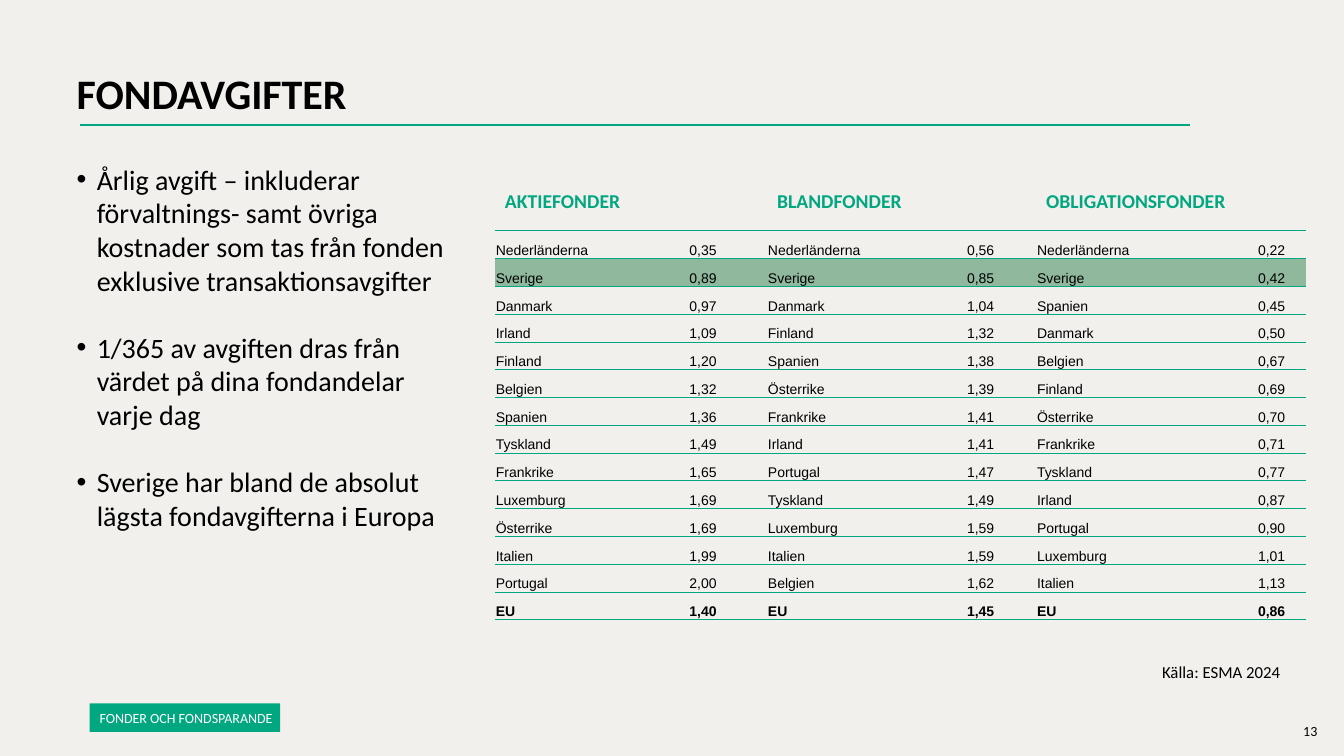
"""Build the slide on fund fees in Europe."""
import dataclasses
import typing

import lxml.etree
import pptx
import pptx.dml.color
import pptx.enum.shapes
import pptx.enum.text
import pptx.oxml.ns
import pptx.util

Pt = pptx.util.Pt
PP_ALIGN = pptx.enum.text.PP_ALIGN
MSO_ANCHOR = pptx.enum.text.MSO_ANCHOR
MSO_AUTO_SIZE = pptx.enum.text.MSO_AUTO_SIZE


@dataclasses.dataclass(frozen=True)
class Theme:
    green: str = "00A780"
    highlight: str = "8FB89D"
    black: str = "000000"
    white: str = "FFFFFF"
    background: str = "F1F0EC"
    heading_font: str = "Calibri"
    table_font: str = "Arial"
    title_size: float = 30
    list_size: float = 20
    header_size: float = 14
    source_size: float = 12
    small_size: float = 10


@dataclasses.dataclass(frozen=True)
class Frame:
    left: float
    top: float
    width: float
    height: float

    def lengths(self) -> list[int]:
        return [Pt(value) for value in dataclasses.astuple(self)]


@dataclasses.dataclass(frozen=True)
class Label:
    text: str
    frame: Frame
    size: float


@dataclasses.dataclass(frozen=True)
class FundType:
    name: str
    name_width: float
    fee_width: float
    fees: str

    def rows(self) -> list[list[str]]:
        return [entry.split() for entry in self.fees.split("; ")]


THEME = Theme()
TITLE_FRAME = Frame(47.5, 49, 879, 104.4)
LIST_FRAME = Frame(47.5, 112.3, 283, 332.6)
TAG_FRAME = Frame(64, 502.5, 136.1, 20.2)
TABLE_LEFT, TABLE_TOP = 353.5, 131.8
HEADER_HEIGHT, ROW_HEIGHT = 33, 19.85
HIGHLIGHTED = "Sverige"
TOTAL = "EU"

BULLETS = (
    "Årlig avgift – inkluderar förvaltnings- samt övriga kostnader som tas från fonden "
    "exklusive transaktionsavgifter",
    "1/365 av avgiften dras från värdet på dina fondandelar varje dag",
    "Sverige har bland de absolut lägsta fondavgifterna i Europa",
)
LABELS = (
    Label("Källa: ESMA 2024", Frame(823, 469.4, 103, 21.6), THEME.source_size),
    Label("13", Frame(923.8, 512.6, 28.8, 19.4), THEME.small_size),
)
FUND_TYPES = (
    FundType("AKTIEFONDER", 103, 91.4,
             "Nederländerna 0,35; Sverige 0,89; Danmark 0,97; Irland 1,09; Finland 1,20; "
             "Belgien 1,32; Spanien 1,36; Tyskland 1,49; Frankrike 1,65; Luxemburg 1,69; "
             "Österrike 1,69; Italien 1,99; Portugal 2,00; EU 1,40"),
    FundType("BLANDFONDER", 113, 79.2,
             "Nederländerna 0,56; Sverige 0,85; Danmark 1,04; Finland 1,32; Spanien 1,38; "
             "Österrike 1,39; Frankrike 1,41; Irland 1,41; Portugal 1,47; Tyskland 1,49; "
             "Luxemburg 1,59; Italien 1,59; Belgien 1,62; EU 1,45"),
    FundType("OBLIGATIONSFONDER", 144, 48.6,
             "Nederländerna 0,22; Sverige 0,42; Spanien 0,45; Danmark 0,50; Belgien 0,67; "
             "Finland 0,69; Österrike 0,70; Frankrike 0,71; Tyskland 0,77; Irland 0,87; "
             "Portugal 0,90; Luxemburg 1,01; Italien 1,13; EU 0,86"),
)


def rgb(code: str) -> pptx.dml.color.RGBColor:
    return pptx.dml.color.RGBColor.from_string(code)


def add_element(parent: typing.Any, tag: str, **attributes: str) -> typing.Any:
    return lxml.etree.SubElement(parent, pptx.oxml.ns.qn(tag), attributes)


def style(para: typing.Any, size: float, color: str = THEME.black,
          name: str = THEME.heading_font, bold: bool = False) -> None:
    para.font.size = Pt(size)
    para.font.name = name
    para.font.bold = bold
    para.font.color.rgb = rgb(color)


def place(shape: typing.Any, frame: Frame) -> None:
    shape.left, shape.top, shape.width, shape.height = frame.lengths()


def write_title(box: typing.Any) -> None:
    place(box, TITLE_FRAME)
    text = box.text_frame
    text.auto_size = MSO_AUTO_SIZE.NONE
    text.vertical_anchor = MSO_ANCHOR.TOP
    para = text.paragraphs[0]
    para.text = "FONDAVGIFTER"
    para.alignment = PP_ALIGN.LEFT
    para.line_spacing = 0.9
    style(para, THEME.title_size, bold=True)


def write_list(box: typing.Any) -> None:
    place(box, LIST_FRAME)
    text = box.text_frame
    text.auto_size = MSO_AUTO_SIZE.NONE
    for index, bullet in enumerate(BULLETS):
        para = text.add_paragraph() if index else text.paragraphs[0]
        para.text = bullet
        para.space_before = Pt(24 if index else 0)
        properties = para._p.get_or_add_pPr()
        properties.set("marL", str(Pt(14.4)))
        properties.set("indent", str(-Pt(14.4)))
        add_element(properties, "a:buFont", typeface="Arial")
        add_element(properties, "a:buChar", char="•")
        style(para, THEME.list_size)


def add_label(slide: typing.Any, label: Label) -> None:
    text = slide.shapes.add_textbox(*label.frame.lengths()).text_frame
    text.word_wrap = True
    text.paragraphs[0].text = label.text
    style(text.paragraphs[0], label.size)


def add_title_rule(slide: typing.Any) -> None:
    rule = slide.shapes.add_connector(
        pptx.enum.shapes.MSO_CONNECTOR.STRAIGHT, Pt(56.9), Pt(89.3), Pt(850.3), Pt(89.3))
    rule.line.color.rgb = rgb(THEME.green)
    rule.line.width = Pt(1.5)
    add_element(rule._element.spPr, "a:effectLst")


def add_tag(slide: typing.Any) -> None:
    tag = slide.shapes.add_shape(
        pptx.enum.shapes.MSO_SHAPE.RECTANGLE, *TAG_FRAME.lengths())
    tag.shadow.inherit = False
    tag.fill.solid()
    tag.fill.fore_color.rgb = rgb(THEME.green)
    tag.line.fill.background()
    text = tag.text_frame
    text.word_wrap = False
    text.vertical_anchor = MSO_ANCHOR.MIDDLE
    text.margin_left, text.margin_top = Pt(7.2), Pt(5.8)
    text.margin_right, text.margin_bottom = Pt(2.9), Pt(3.6)
    para = text.paragraphs[0]
    para.text = "FONDER OCH FONDSPARANDE"
    para.alignment = PP_ALIGN.LEFT
    para.line_spacing = 0.9
    style(para, THEME.small_size, THEME.white)


def set_borders(cell: typing.Any, top: float, bottom: float) -> None:
    properties = cell._tc.get_or_add_tcPr()
    for side, width in (("L", 0), ("R", 0), ("T", top), ("B", bottom)):
        line = add_element(properties, f"a:ln{side}", w=str(Pt(width)))
        if width:
            add_element(add_element(line, "a:solidFill"), "a:srgbClr", val=THEME.green)
        else:
            add_element(line, "a:noFill")


def write_header(cell: typing.Any, text: str) -> None:
    set_borders(cell, 0, 1)
    cell.fill.background()
    cell.text = text
    style(cell.text_frame.paragraphs[0], THEME.header_size, THEME.green, bold=True)


def write_fee(cell: typing.Any, text: str, country: str, first: bool) -> None:
    set_borders(cell, 1 if first else 0.5, 0.5)
    if country == HIGHLIGHTED:
        cell.fill.solid()
        cell.fill.fore_color.rgb = rgb(THEME.highlight)
    else:
        cell.fill.background()
    cell.margin_left = cell.margin_right = cell.margin_top = Pt(0.7)
    cell.margin_bottom = Pt(0)
    cell.vertical_anchor = MSO_ANCHOR.BOTTOM
    cell.text = text
    para = cell.text_frame.paragraphs[0]
    para.alignment = PP_ALIGN.LEFT if text == country else PP_ALIGN.CENTER
    style(para, THEME.small_size, name=THEME.table_font, bold=country == TOTAL)


def add_fee_table(slide: typing.Any) -> None:
    widths = [width for fund in FUND_TYPES for width in (fund.name_width, fund.fee_width)]
    heights = [HEADER_HEIGHT] + [ROW_HEIGHT] * len(FUND_TYPES[0].rows())
    frame = Frame(TABLE_LEFT, TABLE_TOP, sum(widths), sum(heights))
    table = slide.shapes.add_table(len(heights), len(widths), *frame.lengths()).table
    table.first_row = table.horz_banding = False
    for column, width in zip(table.columns, widths):
        column.width = Pt(width)
    for row, height in zip(table.rows, heights):
        row.height = Pt(height)
    for group, fund in enumerate(FUND_TYPES):
        for offset, heading in enumerate((fund.name, "")):
            write_header(table.cell(0, 2 * group + offset), heading)
        for number, entry in enumerate(fund.rows(), start=1):
            for offset, text in enumerate(entry):
                write_fee(table.cell(number, 2 * group + offset), text, entry[0], number == 1)


def main() -> None:
    deck = pptx.Presentation()
    deck.slide_width, deck.slide_height = Pt(960), Pt(540)
    slide = deck.slides.add_slide(deck.slide_layouts[1])
    slide.background.fill.solid()
    slide.background.fill.fore_color.rgb = rgb(THEME.background)
    write_title(slide.shapes.title)
    write_list(slide.placeholders[1])
    add_title_rule(slide)
    add_tag(slide)
    for label in LABELS:
        add_label(slide, label)
    add_fee_table(slide)
    deck.save("out.pptx")


if __name__ == "__main__":
    main()
